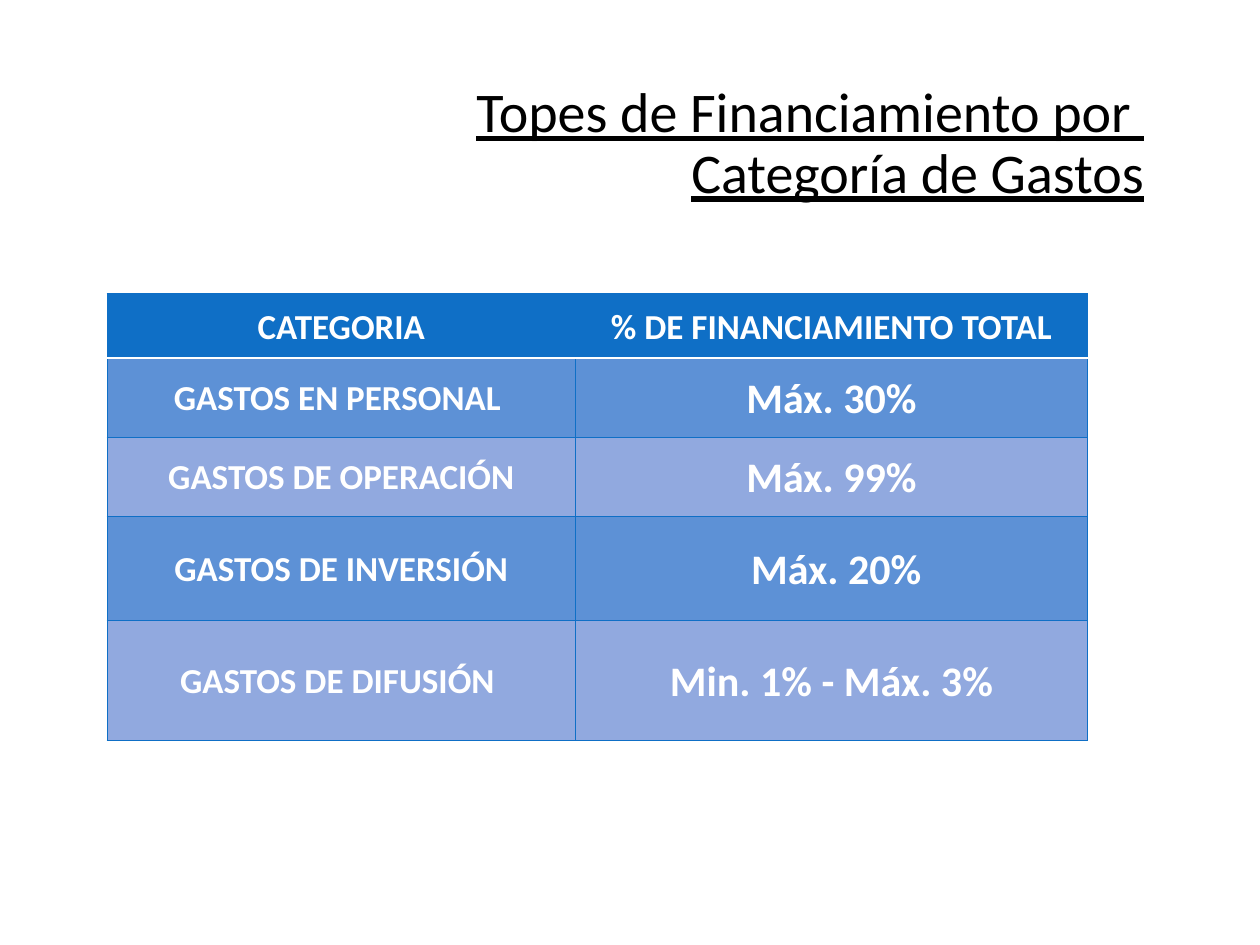
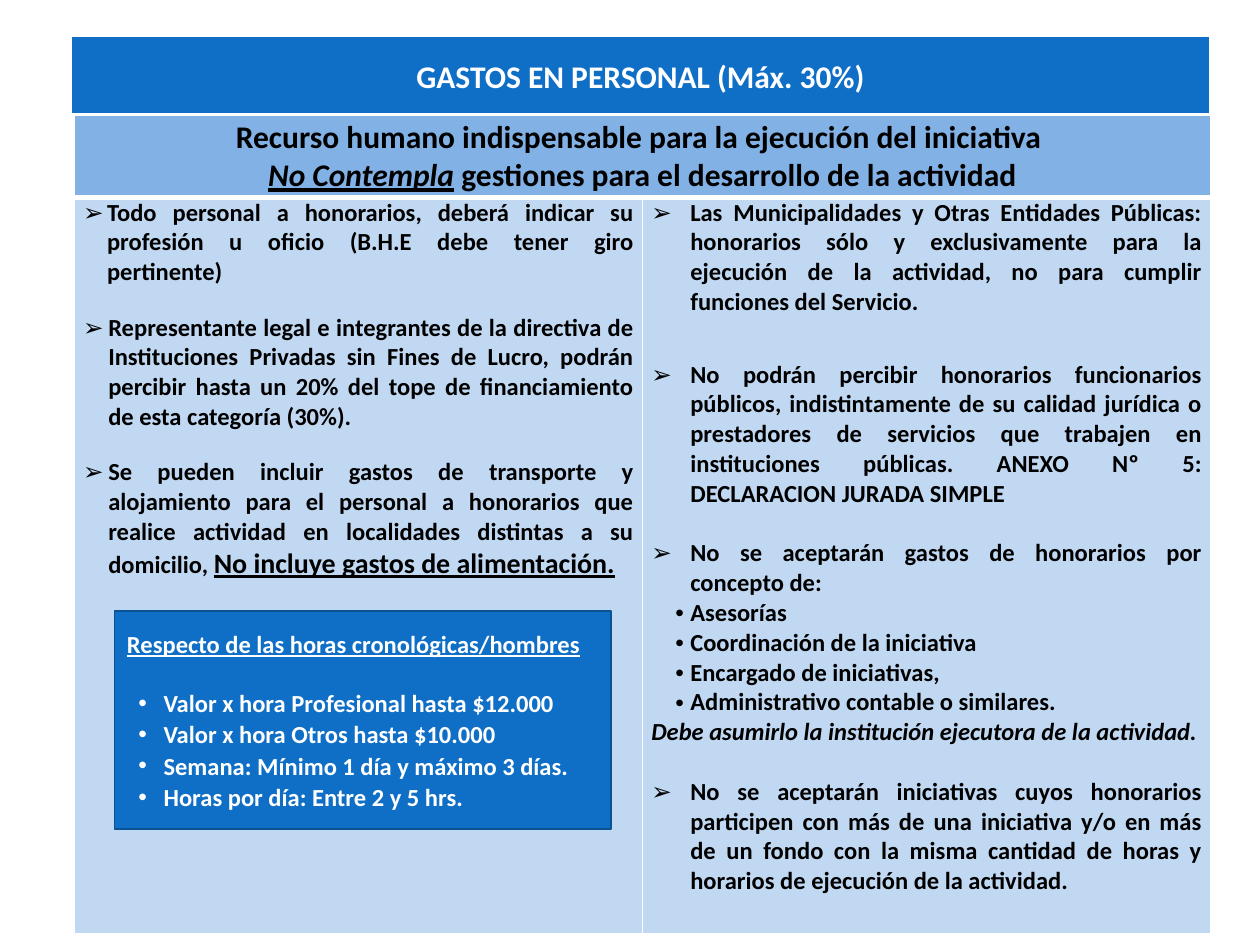
from dataclasses import dataclass

from lxml.etree import SubElement
from pptx import Presentation
from pptx.dml.color import RGBColor
from pptx.enum.shapes import MSO_SHAPE as SHAPE
from pptx.enum.text import MSO_ANCHOR as ANCHOR, PP_ALIGN as ALIGN
from pptx.oxml.ns import qn
from pptx.util import Pt

FONT = "Calibri"
BLUE, DARK_BLUE = "0F6FC6", "0B5292"
BAND_DARK, BAND_LIGHT = "5D91D6", "91A9DF"
SUBHEAD_FILL, BODY_FILL = "82B1E5", "C1D8F2"
WHITE, BLACK = "FFFFFF", "000000"


@dataclass
class Para:
    """Runs are (text, style) pairs; left, hang and after are points."""
    runs: list
    align: ALIGN = ALIGN.JUSTIFY
    bullet: str = ""
    left: float = 0
    hang: float = 0
    after: float = 0
    spacing: float = 1


def plain(text, **options):
    return Para([(text, {})], **options)


def centered(text, size, spacing=1.07):
    return Para([(text, {"size": size})], ALIGN.CENTER, spacing=spacing)


def arrow(*runs, left=22.3, after=0):
    return Para(list(runs), bullet="➢", left=left, hang=left, after=after)


TITLE_STYLE = {"size": 32, "underline": True}
TITLE = Para([("Topes de Financiamiento por ", TITLE_STYLE),
              ("Categoría de Gastos", {**TITLE_STYLE, "new_line": True})],
             ALIGN.RIGHT, spacing=0.9)
LIMITS = [
    ("CATEGORIA", "% DE FINANCIAMIENTO TOTAL"),
    ("GASTOS EN PERSONAL ", "Máx. 30%"),
    ("GASTOS DE OPERACIÓN", "Máx. 99%"),
    ("GASTOS DE INVERSIÓN", " Máx. 20%"),
    ("GASTOS DE DIFUSIÓN ", "Min. 1% - Máx. 3%"),
]
LIMIT_COLS = [267.8, 292.3]
LIMIT_ROWS = [36.7, 45.2, 45.2, 59.8, 68.4]

HEADING = "GASTOS EN PERSONAL (Máx. 30%)"
SUBHEAD = [
    centered("Recurso humano indispensable para la ejecución del iniciativa ", 18, 1),
    Para([("No Contempla", {"size": 18, "italic": True, "underline": True}),
          (" gestiones para el desarrollo de la actividad", {"size": 18})],
         ALIGN.CENTER),
]
STAFF_RULES = [
    arrow(("Todo personal a honorarios, deberá indicar su profesión u oficio "
           "(B.H.E debe tener giro pertinente)", {}), left=13.7, after=14.6),
    arrow(("Representante legal e integrantes de la directiva de Instituciones "
           "Privadas sin Fines de Lucro, podrán percibir hasta un 20% del tope de "
           "financiamiento de esta categoría (30%).", {}), left=14.4, after=14.6),
    arrow(("Se pueden incluir gastos de transporte y alojamiento para el personal "
           "a honorarios que realice actividad en localidades distintas a su "
           "domicilio, ", {}),
          ("No incluye gastos de alimentación.", {"size": 16, "underline": True}),
          left=14.4),
]
EXCLUDED_ROLES = ["Asesorías ", "Coordinación de la iniciativa ",
                  "Encargado de iniciativas, ", "Administrativo contable o similares."]
FEE_RULES = [
    arrow(("Las Municipalidades y Otras Entidades Públicas: honorarios sólo y "
           "exclusivamente para la ejecución de la actividad, no para cumplir "
           "funciones del Servicio.", {}), after=24.4),
    arrow(("No podrán percibir honorarios funcionarios públicos, indistintamente de "
           "su calidad jurídica o prestadores de servicios que trabajen en "
           "instituciones públicas. ANEXO Nº 5: DECLARACION JURADA SIMPLE", {}),
          after=17),
    arrow(("No se aceptarán gastos de honorarios por concepto de: ", {})),
    *[plain(role, bullet="•", left=22.3, hang=8.6) for role in EXCLUDED_ROLES],
    Para([("Debe asumirlo la institución ejecutora de la actividad.",
           {"italic": True})], after=17),
    arrow(("No se aceptarán iniciativas cuyos honorarios participen con más de una "
           "iniciativa y/o en más de un fondo con la misma cantidad de horas y "
           "horarios de ejecución de la actividad.", {})),
]
HOURS = ["Valor x hora Profesional hasta $12.000 ", "Valor x hora Otros hasta $10.000",
         "Semana: Mínimo 1 día y máximo 3 días.", "Horas por día: Entre 2 y 5 hrs."]
HOURS_NOTE = [
    Para([("Respecto de las horas cronológicas/hombres", {"underline": True})], after=17),
    *[plain(text, bullet="•", left=20.9, hang=14.4, spacing=1.07 if i else 1)
      for i, text in enumerate(HOURS)],
]


def rgb(color):
    return RGBColor.from_string(color)


def write(tf, paras, color, bold=True):
    for i, para in enumerate(paras):
        p = tf.add_paragraph() if i else tf.paragraphs[0]
        p.alignment, p.line_spacing = para.align, para.spacing
        p.space_before, p.space_after = Pt(0), Pt(para.after)
        if para.bullet:
            pPr = p._p.get_or_add_pPr()
            pPr.set("marL", str(Pt(para.left)))
            pPr.set("indent", str(-Pt(para.hang)))
            SubElement(pPr, qn("a:buFont")).set("typeface", "Arial")
            SubElement(pPr, qn("a:buChar")).set("char", para.bullet)
        for text, style in para.runs:
            if style.get("new_line"):
                p.add_line_break()
            r = p.add_run()
            r.text = text
            font = r.font
            font.name, font.size, font.bold = FONT, Pt(style.get("size", 14)), bold
            font.italic = style.get("italic", False)
            font.underline = style.get("underline", False)
            font.color.rgb = rgb(color)


def set_borders(cell, color, width, **special):
    """Draw the four edges; special maps L, R, T or B to (color, width)."""
    tcPr = cell._tc.get_or_add_tcPr()
    for i, side in enumerate("LRTB"):
        edge_color, edge_width = special.get(side, (color, width))
        ln = SubElement(tcPr, qn("a:ln" + side), w=str(Pt(edge_width)))
        fill = SubElement(ln, qn("a:solidFill"))
        SubElement(fill, qn("a:srgbClr"), val=edge_color)
        tcPr.insert(i, ln)


def add_table(slide, left, top, cols, rows):
    frame = slide.shapes.add_table(len(rows), len(cols), Pt(left), Pt(top),
                                   Pt(sum(cols)), Pt(sum(rows)))
    table = frame.table
    table.first_row = table.horz_banding = False
    for col, width in zip(table.columns, cols):
        col.width = Pt(width)
    for row, height in zip(table.rows, rows):
        row.height = Pt(height)
    return table


def fill_cell(cell, paras, fill, color, margin=1.4, anchor=ANCHOR.MIDDLE):
    cell.margin_left = cell.margin_right = Pt(margin)
    cell.margin_top = cell.margin_bottom = 0
    cell.vertical_anchor = anchor
    cell.fill.solid()
    cell.fill.fore_color.rgb = rgb(fill)
    write(cell.text_frame, paras, color)


def add_limits_slide(prs):
    slide = prs.slides.add_slide(prs.slide_layouts[6])
    tf = slide.shapes.add_textbox(Pt(59.8), Pt(52.6), Pt(601.2), Pt(60.5)).text_frame
    tf.word_wrap, tf.vertical_anchor = True, ANCHOR.MIDDLE
    write(tf, [TITLE], BLACK, bold=False)

    table = add_table(slide, 61.2, 167.8, LIMIT_COLS, LIMIT_ROWS)
    for i, row in enumerate(LIMITS):
        fill = (BAND_DARK if i % 2 else BAND_LIGHT) if i else BLUE
        special = {0: {"B": (WHITE, 1)}, 1: {"T": (WHITE, 1)}}.get(i, {})
        for j, text in enumerate(row):
            cell = table.cell(i, j)
            fill_cell(cell, [centered(text, 24 if i and j else 20)], fill, WHITE)
            set_borders(cell, BLUE, 0.5, **special)


def add_staff_slide(prs):
    slide = prs.slides.add_slide(prs.slide_layouts[6])
    thick = (WHITE, 3)
    heading = add_table(slide, 40.6, 20.9, [650.9], [45.1]).cell(0, 0)
    fill_cell(heading, [centered(HEADING, 18)], BLUE, WHITE)
    set_borders(heading, WHITE, 1, B=thick)

    table = add_table(slide, 42.5, 66, [324.7] * 2, [47, 420.5])
    table.cell(0, 0).merge(table.cell(0, 1))
    fill_cell(table.cell(0, 0), SUBHEAD, SUBHEAD_FILL, BLACK, 5)
    for j, rules in enumerate([STAFF_RULES, FEE_RULES]):
        fill_cell(table.cell(1, j), rules, BODY_FILL, BLACK, 5, ANCHOR.TOP)
        set_borders(table.cell(0, j), WHITE, 1, B=thick)
        set_borders(table.cell(1, j), WHITE, 1, T=thick)

    note = slide.shapes.add_shape(SHAPE.RECTANGLE, Pt(65.5), Pt(349.2),
                                  Pt(283.7), Pt(124.6))
    note.shadow.inherit = False
    note.fill.solid()
    note.fill.fore_color.rgb = rgb(BLUE)
    note.line.color.rgb, note.line.width = rgb(DARK_BLUE), Pt(1)
    note.text_frame.word_wrap = True
    note.text_frame.vertical_anchor = ANCHOR.MIDDLE
    write(note.text_frame, HOURS_NOTE, WHITE)


def main():
    prs = Presentation()
    prs.slide_width, prs.slide_height = Pt(720), Pt(540)
    add_limits_slide(prs)
    add_staff_slide(prs)
    prs.save("out.pptx")


if __name__ == "__main__":
    main()
